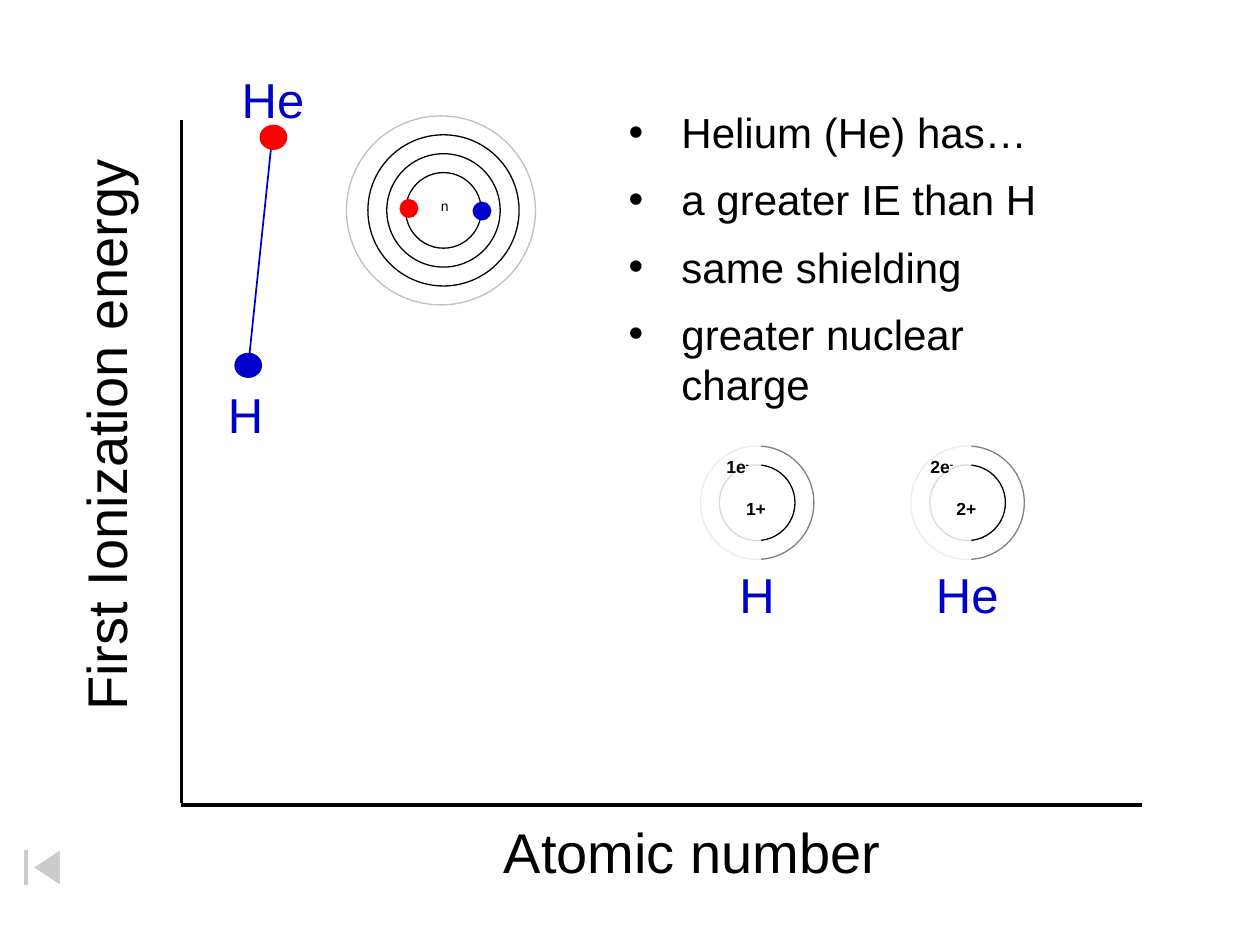
"""Build a slide comparing the first ionization energy of hydrogen and helium."""
from lxml import etree
from pptx import Presentation
from pptx.dml.color import RGBColor
from pptx.enum import shapes, text
from pptx.oxml.ns import qn
from pptx.util import Inches, Pt

COLORS = {"black": "000000", "white": "FFFFFF", "blue": "0000CC",
          "red": "FF0000", "silver": "C0C0C0", "gray": "808080"}

prs = Presentation()
prs.slide_width, prs.slide_height = Inches(10), Inches(7.5)
cell = prs.slide_width // 100
s = prs.slides.add_slide(prs.slide_layouts[6])


def add_shape(kind, x, y, w, h, fill=None, line=None, alpha=None):
    sp = s.shapes.add_shape(kind, *[round(v * cell) for v in (x, y, w, h)])
    sp.shadow.inherit = False
    if fill:
        sp.fill.solid()
        sp.fill.fore_color.rgb = RGBColor.from_string(COLORS[fill])
    else:
        sp.fill.background()
    if line:
        sp.line.color.rgb = RGBColor.from_string(COLORS[line])
        sp.line.width = Pt(0.75)
    else:
        sp.line.fill.background()
    if alpha:
        clr = sp.fill._xPr.find(".//" + qn("a:srgbClr"))
        etree.SubElement(clr, qn("a:alpha")).set("val", str(alpha * 1000))


def add_text(lines, x, y, w, h, size, color="black", bold=False, wrap=True,
             align=text.PP_ALIGN.LEFT, rotation=0):
    sp = s.shapes.add_textbox(*[round(v * cell) for v in (x, y, w, h)])
    sp.rotation = rotation
    tf = sp.text_frame
    tf.word_wrap = wrap
    tf.text = lines
    for p in tf.paragraphs:
        p.alignment = align
        for r in p.runs:
            r.font.name, r.font.size, r.font.bold = "Arial", Pt(size), bold
            r.font.color.rgb = RGBColor.from_string(COLORS[color])
    return tf


oval = shapes.MSO_SHAPE.OVAL
for x1, y1, x2, y2, color, width in [(14.4, 9.5, 14.4, 63.7, "black", 2),
                                     (90.6, 63.9, 14.4, 63.9, "black", 2),
                                     (19.7, 29.1, 21.6, 10.9, "blue", 1)]:
    cx = s.shapes.add_connector(shapes.MSO_CONNECTOR.STRAIGHT,
                                *[round(v * cell) for v in (x1, y1, x2, y2)])
    cx.line.color.rgb = RGBColor.from_string(COLORS[color])
    cx.line.width = Pt(width)
    etree.SubElement(cx._element.spPr, qn("a:effectLst"))

add_text("First Ionization energy", -14.7, 31.2, 46.1, 6.3, 32, rotation=270)
add_text("Atomic number", 39, 64.4, 32.3, 6.3, 32)
add_text("H", 17.1, 30, 3.8, 5.7, 28, "blue")
add_text("He", 18.2, 5, 7.3, 5.7, 28, "blue")
for x, y, color in [(18.6, 28, "blue"), (20.6, 9.9, "red")]:
    add_shape(oval, x, y, 2.2, 2, color)

add_shape(shapes.MSO_SHAPE.ACTION_BUTTON_BEGINNING, 0, 66.9, 6.7, 3.9,
          "white", "white", 50)

for d, center, color in [(6, 35.2, "black"), (9, 35.2, "black"),
                         (12, 35.2, "black"), (15, 35, "silver")]:
    add_shape(oval, center - d / 2, 16.7 - d / 2, d, d, line=color)
add_shape(oval, 31.7, 15.8, 1.5, 1.5, "red")
add_shape(oval, 37.5, 16, 1.5, 1.5, "blue")
add_text("n", 34, 15.2, 2.7, 2.3, 8, wrap=False)

for n, center, symbol, symbol_x, electron_x in [(1, 60.1, "H", 57.7, 56.6),
                                                (2, 76.8, "He", 73.3, 72.8)]:
    for d, color in [(9, "gray"), (6, "black")]:
        add_shape(oval, center - d / 2, 39.9 - d / 2, d, d, line=color)
    add_shape(shapes.MSO_SHAPE.RECTANGLE, center - 7.2, 34.3, 7.5, 10.8,
              "white", alpha=85)
    add_text(symbol, symbol_x, 44.3, 9.4, 5.7, 28, "blue")
    add_text(f"{n}+", center - 1.9, 39, 3.6, 2.7, 10, bold=True, wrap=False,
             align=text.PP_ALIGN.CENTER)
    tf = add_text(f"{n}e", electron_x, 35.7, 3.9, 2.7, 10, bold=True, wrap=False,
                  align=text.PP_ALIGN.CENTER)
    r = tf.paragraphs[0].add_run()
    r.text = "-"
    r.font.name, r.font.size, r.font.bold = "Arial", Pt(10), True
    r.font.color.rgb = RGBColor.from_string(COLORS["black"])
    r.font._element.set("baseline", "30000")

tf = add_text("Helium (He) has…\na greater IE than H\nsame shielding\n"
              "greater nuclear charge", 48.9, 8, 38.6, 21, 24)
for i, p in enumerate(tf.paragraphs):
    p.space_before = Pt(9.5 if i else 0)
    pPr = p._p.get_or_add_pPr()
    pPr.set("marL", str(round(4.2 * cell)))
    pPr.set("indent", str(round(-4.2 * cell)))
    etree.SubElement(pPr, qn("a:buFont")).set("typeface", "Arial")
    etree.SubElement(pPr, qn("a:buChar")).set("char", "•")

prs.save("out.pptx")
